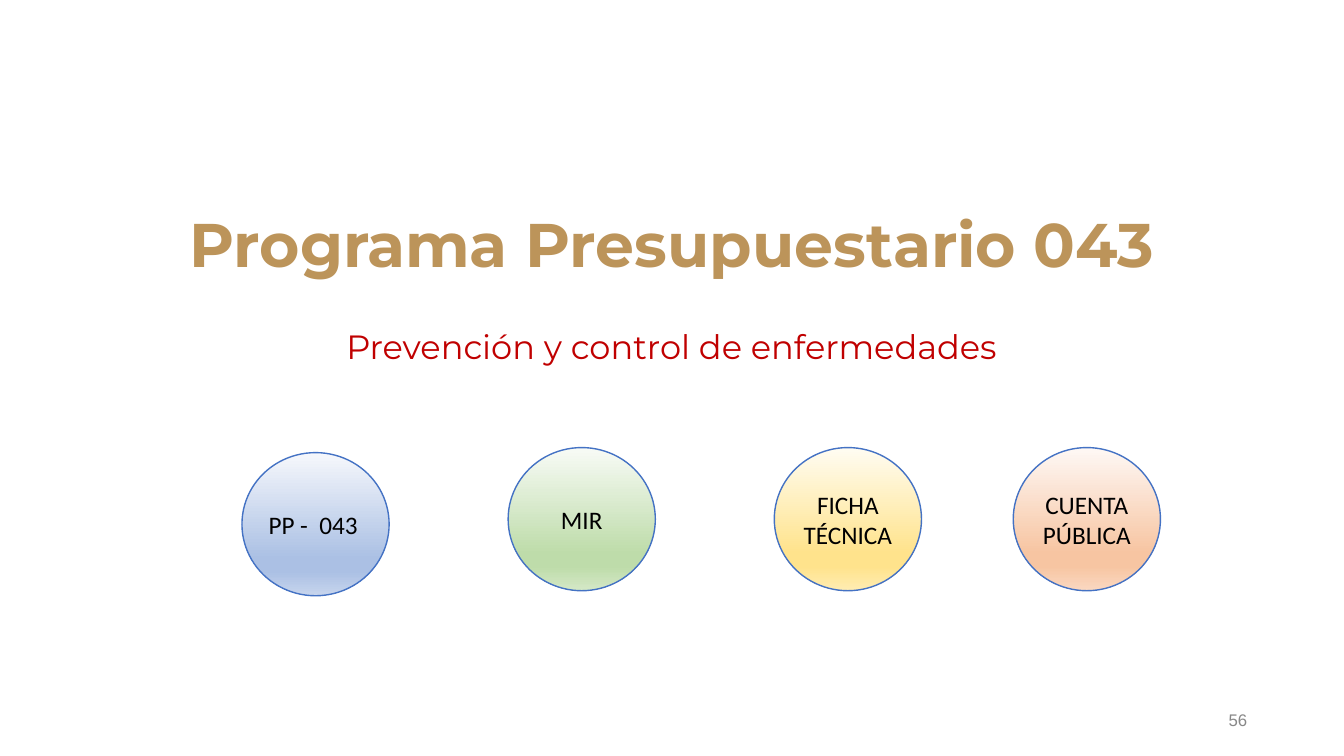
from lxml import etree
from pptx import Presentation
from pptx import util as u
from pptx.dml.color import RGBColor
from pptx.enum import shapes, text
from pptx.oxml import ns

GOLD = RGBColor(0xBC, 0x94, 0x5A)
RED = RGBColor(0xC0, 0x00, 0x00)
GRAY = RGBColor(0x88, 0x88, 0x88)
BLACK = RGBColor(0, 0, 0)
BLUE = RGBColor(0x44, 0x72, 0xC4)
SKY = [RGBColor.from_string(c) for c in ("F6F8FC", "ABC0E4", "C7D5ED")]
GREEN = [RGBColor.from_string(c) for c in ("F8FBF6", "BEDCAA", "D4E8C6")]
YELLOW = [RGBColor.from_string(c) for c in ("FFFCF2", "FFE38C", "FFECB2")]
PEACH = [RGBColor.from_string(c) for c in ("FEF8F5", "F7C5A2", "FAD8C1")]
CENTER = text.PP_ALIGN.CENTER
MIDDLE = text.MSO_ANCHOR.MIDDLE


class Deck:
    """Holds the slide and the style of its labels and circles."""

    inset = u.Inches(0.05)

    def __init__(self):
        self.prs = Presentation()
        self.prs.slide_width = u.Inches(13.33)
        self.prs.slide_height = u.Inches(7.5)
        self.slide = self.prs.slides.add_slide(self.prs.slide_layouts[6])

    def letter(self, shape, words, font, size, color, align=CENTER,
               anchor=MIDDLE, bold=False, wrap=True, lead=None):
        frame = shape.text_frame
        frame.margin_left = frame.margin_right = self.inset
        frame.margin_top = frame.margin_bottom = self.inset
        frame.word_wrap = wrap
        frame.vertical_anchor = anchor
        frame.text = words
        para = frame.paragraphs[0]
        para.alignment = align
        if lead:
            para.line_spacing = lead
        run = para.runs[0].font
        run.name, run.size, run.bold = font, u.Pt(size), bold
        run.color.rgb = color

    def label(self, box, words, font, size, color, **style):
        shape = self.slide.shapes.add_textbox(*map(u.Inches, box))
        self.letter(shape, words, font, size, color, **style)

    def blend(self, shape, tones):
        shape.fill.gradient()
        shape.fill.gradient_angle = 270
        stops = shape.element.spPr.find(".//" + ns.qn("a:gsLst"))
        for stop in list(stops):
            stops.remove(stop)
        pale, deep, soft = tones
        for pos, tone in ((0, pale), (74, deep), (83, deep), (100, soft)):
            stop = etree.SubElement(stops, ns.qn("a:gs"), pos=str(pos * 1000))
            etree.SubElement(stop, ns.qn("a:srgbClr"), val=str(tone))

    def circle(self, left, top, words, tones, align=CENTER):
        box = map(u.Inches, (left, top, 1.46, 1.42))
        shape = self.slide.shapes.add_shape(shapes.MSO_SHAPE.OVAL, *box)
        shape.shadow.inherit = False
        self.blend(shape, tones)
        shape.line.color.rgb = BLUE
        shape.line.width = u.Pt(1)
        self.letter(shape, words, "Calibri", 18, BLACK, align=align)


def main():
    deck = Deck()
    deck.label((0.91, 0.86, 11.51, 1.98), "Programa Presupuestario 043",
               "Montserrat", 44, GOLD, bold=True, lead=0.9,
               anchor=text.MSO_ANCHOR.BOTTOM)
    deck.label((0.91, 3.23, 11.5, 0.62), "Prevención y control de enfermedades",
               "Montserrat", 24, RED, lead=0.9, anchor=text.MSO_ANCHOR.TOP)
    deck.label((12.13, 7, 0.29, 0.29), "56", "Arial", 12, GRAY,
               align=text.PP_ALIGN.RIGHT, wrap=False)
    deck.circle(2.4, 4.49, "PP -  043", SKY, align=text.PP_ALIGN.LEFT)
    deck.circle(5.04, 4.44, "MIR", GREEN)
    deck.circle(7.68, 4.44, "FICHA TÉCNICA", YELLOW)
    deck.circle(10.05, 4.44, "CUENTA PÚBLICA", PEACH)
    deck.prs.save("out.pptx")


if __name__ == "__main__":
    main()
